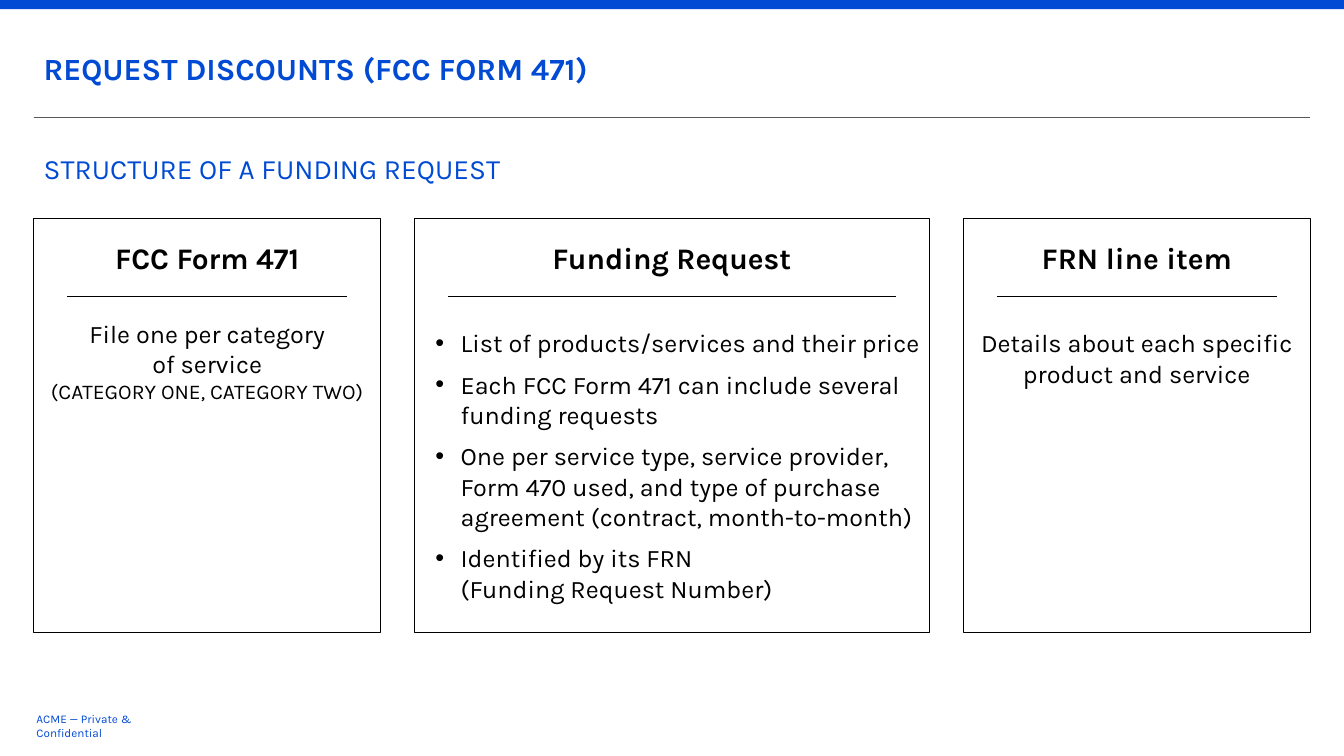
from lxml.etree import SubElement
from pptx import Presentation
from pptx.dml.color import RGBColor
from pptx.enum.shapes import MSO_CONNECTOR, MSO_SHAPE
from pptx.enum.text import MSO_ANCHOR, MSO_AUTO_SIZE, PP_ALIGN
from pptx.oxml.ns import qn
from pptx.util import Pt

BLUE = RGBColor(0x00, 0x4A, 0xD4)
BLACK = RGBColor(0, 0, 0)
GREY = RGBColor(0x59, 0x59, 0x59)
WHITE = RGBColor(255, 255, 255)

COLUMNS = [
    (24, 248, "FCC Form 471"),
    (296, 368, "Funding Request"),
    (688, 248, "FRN line item"),
]
CATEGORY_LINES = [
    ("File one per category", 18),
    ("of service", 18),
    ("(CATEGORY ONE, CATEGORY TWO)", 15),
]
REQUEST_POINTS = [
    "List of products/services and their price",
    "Each FCC Form 471 can include several funding requests",
    "One per service type, service provider, Form 470 used, and type of "
    "purchase agreement (contract, month-to-month)",
    "Identified by its FRN\n(Funding Request Number)",
]


class SlideBuilder:
    """Holds the style and the current slide and adds elements in points."""

    def __init__(self, prs, font="Karla"):
        self.s = prs.slides.add_slide(prs.slide_layouts[5])
        self.font = font

    def box(self, x, y, w, h, fill, line=None):
        sp = self.s.shapes.add_shape(
            MSO_SHAPE.RECTANGLE, Pt(x), Pt(y), Pt(w), Pt(h))
        sp.shadow.inherit = False
        sp.fill.solid()
        sp.fill.fore_color.rgb = fill
        if line is None:
            sp.line.fill.background()
        else:
            sp.line.color.rgb = line
            sp.line.width = Pt(0.75)

    def rule(self, x, y, w, color=BLACK):
        line = self.s.shapes.add_connector(
            MSO_CONNECTOR.STRAIGHT, Pt(x), Pt(y), Pt(x + w), Pt(y))
        line.line.color.rgb = color
        line.line.width = Pt(0.75)
        SubElement(line._element.spPr, qn("a:effectLst"))

    def paragraph(self, p, text, size, color=BLACK, bold=False,
                  align=PP_ALIGN.LEFT, after=0, bullet=False):
        p.alignment = align
        p.space_after = Pt(after)
        if bullet:
            pPr = p._p.get_or_add_pPr()
            pPr.set("marL", str(Pt(18)))
            pPr.set("indent", str(Pt(-18)))
            SubElement(pPr, qn("a:buFont"), typeface="Arial")
            SubElement(pPr, qn("a:buChar"), char="•")
        for i, line in enumerate(text.split("\n")):
            if i:
                p.add_line_break()
            r = p.add_run()
            r.text = line
            r.font.name = self.font
            r.font.size = Pt(size)
            r.font.bold = bold
            r.font.color.rgb = color

    def text(self, x, y, w, h, lines, anchor=MSO_ANCHOR.TOP, margin=None,
             **style):
        sp = self.s.shapes.add_textbox(Pt(x), Pt(y), Pt(w), Pt(h))
        tf = sp.text_frame
        tf.word_wrap = True
        tf.vertical_anchor = anchor
        if margin is not None:
            tf.margin_left = tf.margin_right = Pt(margin)
            tf.margin_top = tf.margin_bottom = Pt(margin)
        for i, (text, size) in enumerate(lines):
            p = tf.add_paragraph() if i else tf.paragraphs[0]
            self.paragraph(p, text, size, **style)

    def title(self, x, y, w, h, text, size):
        sp = self.s.shapes.title
        sp.left, sp.top, sp.width, sp.height = Pt(x), Pt(y), Pt(w), Pt(h)
        tf = sp.text_frame
        tf.word_wrap = True
        tf.auto_size = MSO_AUTO_SIZE.NONE
        tf.vertical_anchor = MSO_ANCHOR.MIDDLE
        self.paragraph(tf.paragraphs[0], text, size, BLUE)


def main():
    prs = Presentation()
    prs.slide_width, prs.slide_height = Pt(960), Pt(540)
    s = SlideBuilder(prs)

    s.box(0, 0, 960, 6.5, BLUE)
    s.rule(24, 84, 912, GREY)
    s.text(24, 24, 912, 50, [("REQUEST DISCOUNTS (FCC FORM 471)", 22)],
           anchor=MSO_ANCHOR.MIDDLE, color=BLUE, bold=True)
    s.title(24, 96, 912, 48, "STRUCTURE OF A FUNDING REQUEST", 20)

    for x, w, heading in COLUMNS:
        s.box(x, 156, w, 296, WHITE, BLACK)
        s.text(x, 168, w, 33, [(heading, 21.3)], bold=True,
               align=PP_ALIGN.CENTER)
        s.rule(x + 24, 212, w - 48)

    s.text(24, 224, 248, 69, CATEGORY_LINES, align=PP_ALIGN.CENTER)
    s.text(304, 230.5, 361, 212, [(point, 18) for point in REQUEST_POINTS],
           after=8, bullet=True)
    s.text(688, 230.5, 248, 51,
           [("Details about each specific product and service", 18)],
           align=PP_ALIGN.CENTER, after=8)

    s.text(24, 511, 112, 15, [("ACME — Private & Confidential", 8.4)],
           anchor=MSO_ANCHOR.MIDDLE, margin=2, color=BLUE)
    prs.save("out.pptx")


if __name__ == "__main__":
    main()
